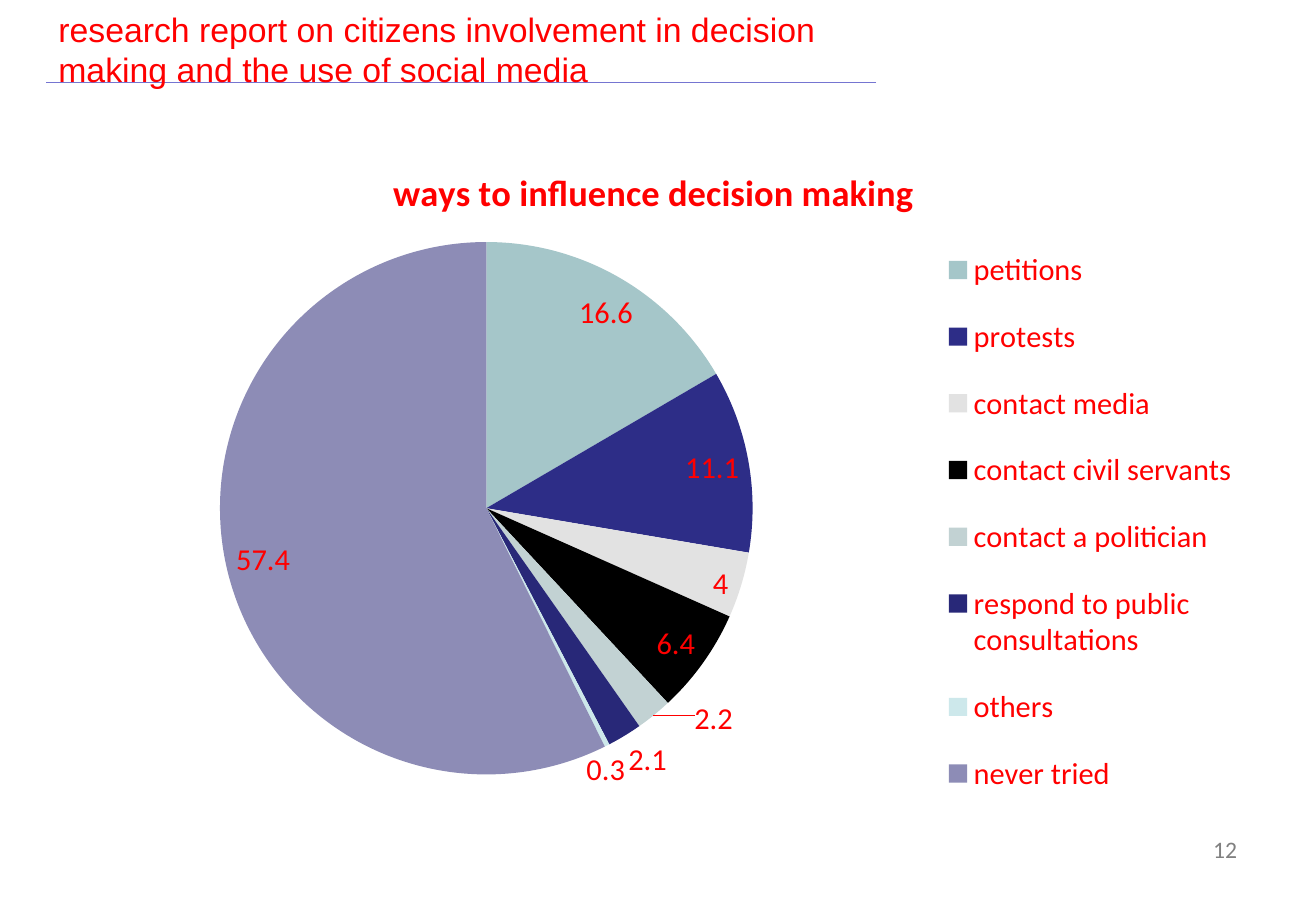
from dataclasses import dataclass

from lxml.etree import SubElement
from pptx import Presentation
from pptx.chart.data import CategoryChartData as ChartData
from pptx.dml.color import RGBColor as Rgb
from pptx.enum.chart import XL_CHART_TYPE as Kind
from pptx.enum.chart import XL_LABEL_POSITION as LabelPos
from pptx.enum.chart import XL_LEGEND_POSITION as LegendPos
from pptx.enum.shapes import MSO_CONNECTOR as Link
from pptx.enum.text import MSO_ANCHOR as Anchor
from pptx.enum.text import MSO_AUTO_SIZE as Fit
from pptx.enum.text import PP_ALIGN as Align
from pptx.oxml.ns import qn
from pptx.util import Inches, Pt


@dataclass(frozen=True)
class Theme:
    red: str = "FF0000"
    gray: str = "808080"
    rule: str = "7575D1"
    head_face: str = "Arial"
    face: str = "Calibri"
    head: float = 20
    chart_head: float = 21.6
    body: float = 18
    small: float = 14


@dataclass(frozen=True)
class Slice:
    """A pie slice; shift moves its label, in fractions of the chart."""
    name: str
    value: float
    color: str
    shift: tuple[float, float] | None = None


THEME = Theme()
TOPIC = "ways to influence decision making"
SLICES = [
    Slice("petitions", 16.6, "A5C6C9"),
    Slice("protests", 11.1, "2D2D87"),
    Slice("contact media", 4, "E2E2E2"),
    Slice("contact civil servants", 6.4, "000000"),
    Slice("contact a politician", 2.2, "C2D2D3", (0.03, -0.03)),
    Slice("respond to public consultations", 2.1, "282878"),
    Slice("others", 0.3, "CDE8EB", (-0.02, 0)),
    Slice("never tried", 57.4, "8D8CB6"),
]


def style(font, size: float, color: str = THEME.red,
          face: str = THEME.face, bold: bool = False) -> None:
    font.name, font.size, font.bold = face, Pt(size), bold
    font.color.rgb = Rgb.from_string(color)


def write(frame, text: str, *, size: float, color: str = THEME.red,
          face: str = THEME.face, bold: bool = False,
          align: Align = Align.LEFT) -> None:
    para = frame.paragraphs[0]
    para.alignment = align
    run = para.add_run()
    run.text = text
    style(run.font, size, color, face, bold)


def place(shape, left: float, top: float, width: float, height: float) -> None:
    shape.left, shape.top = Inches(left), Inches(top)
    shape.width, shape.height = Inches(width), Inches(height)


def lay_out(node, after: str | None, modes: dict[str, str],
            **spots: float) -> None:
    """Give a chart part a manual layout, in fractions of the chart."""
    for old in node.findall(qn("c:layout")):
        node.remove(old)
    layout = SubElement(node, qn("c:layout"))
    manual = SubElement(layout, qn("c:manualLayout"))
    for tag, val in (modes | spots).items():
        SubElement(manual, qn(f"c:{tag}")).set("val", str(val))
    if after:
        node.find(qn(after)).addnext(layout)
    else:
        node.insert(0, layout)


def tint_leads(labels) -> None:
    """Colour the leader lines like the label text."""
    node = SubElement(labels, qn("c:leaderLines"))
    line = SubElement(SubElement(node, qn("c:spPr")), qn("a:ln"))
    fill = SubElement(line, qn("a:solidFill"))
    SubElement(fill, qn("a:srgbClr")).set("val", THEME.red)


def add_pie(slide) -> None:
    data = ChartData()
    data.categories = [s.name for s in SLICES]
    data.add_series(TOPIC, [s.value for s in SLICES])
    box = [Inches(n) for n in (0.46, 1.15, 9.84, 5.62)]
    chart = slide.shapes.add_chart(Kind.PIE, *box, data).chart
    style(chart.font, THEME.body)

    chart.has_title = True
    write(chart.chart_title.text_frame, TOPIC, size=THEME.chart_head,
          bold=True, align=Align.CENTER)
    chart.chart_title.include_in_layout = False

    chart.has_legend = True
    legend = chart.legend
    legend.position = LegendPos.RIGHT
    legend.include_in_layout = False
    style(legend.font, THEME.body)

    plot = chart.plots[0]
    plot.vary_by_categories = True
    series = plot.series[0]
    labels = series.data_labels
    labels.show_value = True
    labels.position = LabelPos.BEST_FIT
    style(labels.font, THEME.body)

    for i, part in enumerate(SLICES):
        point = series.points[i]
        point.format.fill.solid()
        point.format.fill.fore_color.rgb = Rgb.from_string(part.color)
        if part.shift:
            point.data_label.position = LabelPos.BEST_FIT
            style(point.data_label.font, THEME.body)

    edges = {"xMode": "edge", "yMode": "edge"}
    root = chart.element
    lay_out(root.find(".//" + qn("c:plotArea")), None,
            {"layoutTarget": "inner"} | edges, x=0.13, y=0.15, w=0.46, h=0.78)
    lay_out(root.find(".//" + qn("c:legend")), "c:legendPos", edges,
            x=0.74, y=0.12, w=0.25, h=0.88)
    shifts = [s.shift for s in SLICES if s.shift]
    for label, (dx, dy) in zip(root.iter(qn("c:dLbl")), shifts):
        lay_out(label, "c:idx", {}, x=dx, y=dy)
    tint_leads(root.find(".//" + qn("c:dLbls")))


def add_rule(slide) -> None:
    rule = slide.shapes.add_connector(
        Link.STRAIGHT, Inches(7.21), Inches(0.68), Inches(0.38), Inches(0.68))
    rule.line.color.rgb = Rgb.from_string(THEME.rule)
    rule.line.width = Pt(0.75)
    SubElement(rule._element.spPr, qn("a:effectLst"))
    slide.shapes._spTree.insert(2, rule._element)


def add_title(slide) -> None:
    title = slide.shapes.title
    place(title, 0.38, 0.13, 6.82, 0.55)
    frame = title.text_frame
    frame.word_wrap, frame.auto_size = True, Fit.NONE
    frame.vertical_anchor = Anchor.MIDDLE
    write(frame, "research report on citizens involvement in decision "
          "making and the use of social media",
          size=THEME.head, face=THEME.head_face)


def add_number(slide) -> None:
    box = slide.shapes.add_textbox(0, 0, 0, 0)
    place(box, 9.51, 6.82, 0.77, 0.55)
    box.text_frame.word_wrap = True
    write(box.text_frame, "12", size=THEME.small, color=THEME.gray,
          align=Align.RIGHT)


def main() -> None:
    deck = Presentation()
    deck.slide_width, deck.slide_height = Inches(10.83), Inches(7.5)
    slide = deck.slides.add_slide(deck.slide_layouts[5])
    add_rule(slide)
    add_title(slide)
    add_pie(slide)
    add_number(slide)
    deck.save("out.pptx")


if __name__ == "__main__":
    main()
